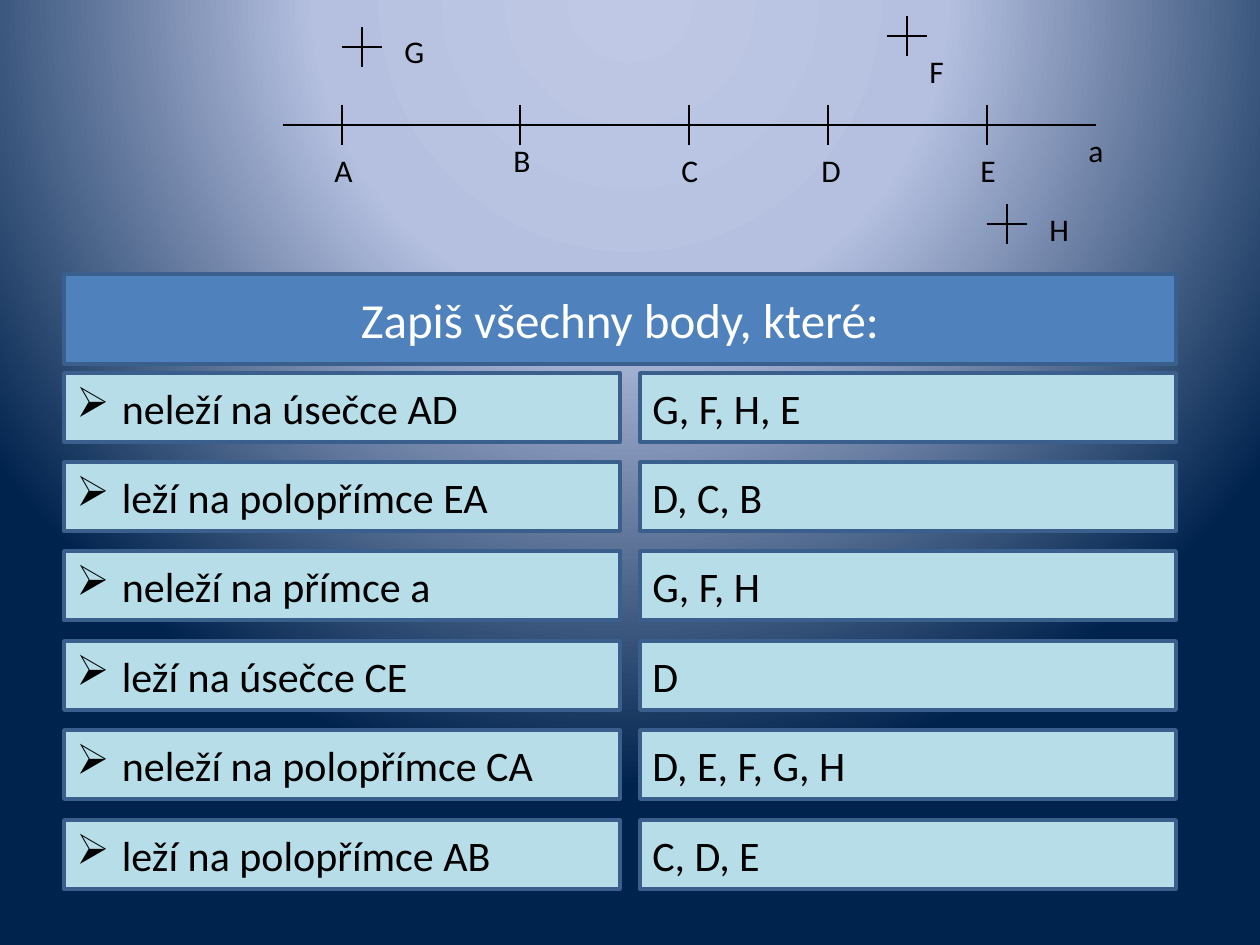
from typing import NamedTuple

from lxml import etree
from pptx import Presentation
from pptx.dml.color import RGBColor
from pptx.enum.shapes import MSO_CONNECTOR, MSO_SHAPE
from pptx.enum.text import MSO_ANCHOR, MSO_AUTO_SIZE, PP_ALIGN
from pptx.oxml.ns import qn
from pptx.slide import Slide
from pptx.text.text import TextFrame
from pptx.util import Pt

STRAIGHT = MSO_CONNECTOR.STRAIGHT
RECTANGLE = MSO_SHAPE.RECTANGLE
MIDDLE = MSO_ANCHOR.MIDDLE
LEFT, CENTER = PP_ALIGN.LEFT, PP_ALIGN.CENTER
GROW = MSO_AUTO_SIZE.SHAPE_TO_FIT_TEXT

BLACK = RGBColor(0x00, 0x00, 0x00)
WHITE = RGBColor(0xFF, 0xFF, 0xFF)
BLUE = RGBColor(0x4F, 0x81, 0xBD)
BORDER = RGBColor(0x3A, 0x5F, 0x8C)
PALE_BLUE = RGBColor(0xB7, 0xDE, 0xE8)
GLOW_STOPS = [
    (0, RGBColor(0xBF, 0xC9, 0xE5)),
    (40, RGBColor(0xB5, 0xC0, 0xE0)),
    (100, RGBColor(0x00, 0x23, 0x4D)),
]
GLOW_CENTER = {"l": 50, "t": -80, "r": 50, "b": 180}

EMU_PER_INCH = 914400
PX_PER_INCH = 126
AXIS_Y = 125
HALF_TICK = 20
BULLET_INDENT = 36
FIRST_ROW_TOP, LAST_ROW_TOP = 373, 820


class Label(NamedTuple):
    text: str
    left: int
    top: int


class Cross(NamedTuple):
    x: int
    y: int


class Box(NamedTuple):
    left: int
    top: int
    width: int
    height: int


class Style(NamedTuple):
    fill: RGBColor
    font_color: RGBColor
    size: int
    alignment: PP_ALIGN


class Task(NamedTuple):
    question: str
    answer: str


HEADING = Style(BLUE, WHITE, 28, CENTER)
ROW = Style(PALE_BLUE, BLACK, 24, LEFT)

TICKS = [342, 520, 689, 828, 987]
CROSSES = [Cross(362, 47), Cross(907, 36), Cross(1007, 224)]
LABELS = [
    Label("a", 1076, 125),
    Label("A", 322, 145),
    Label("B", 501, 135),
    Label("C", 669, 145),
    Label("D", 809, 145),
    Label("E", 968, 145),
    Label("G", 392, 26),
    Label("F", 917, 46),
    Label("H", 1037, 204),
]
TASKS = [
    Task("neleží na úsečce AD", "G, F, H, E"),
    Task("leží na polopřímce EA", "D, C, B"),
    Task("neleží na přímce a", "G, F, H"),
    Task("leží na úsečce CE", "D"),
    Task("neleží na polopřímce CA", "D, E, F, G, H"),
    Task("leží na polopřímce AB", "C, D, E"),
]


def px(length: int) -> int:
    return round(length * EMU_PER_INCH / PX_PER_INCH)


def set_background(slide: Slide) -> None:
    """Fill the background with a circular glow centred above the slide."""
    slide.background.fill.gradient()
    gradient = next(slide.element.iter(qn("a:gradFill")))
    for child in list(gradient):
        gradient.remove(child)
    stops = etree.SubElement(gradient, qn("a:gsLst"))
    for position, color in GLOW_STOPS:
        stop = etree.SubElement(stops, qn("a:gs"), pos=str(position * 1000))
        etree.SubElement(stop, qn("a:srgbClr"), val=str(color))
    circle = etree.SubElement(gradient, qn("a:path"), {"path": "circle"})
    center = {side: str(percent * 1000) for side, percent in GLOW_CENTER.items()}
    etree.SubElement(circle, qn("a:fillToRect"), center)


def add_line(slide: Slide, x1: int, y1: int, x2: int, y2: int, width: float = 0.75) -> None:
    line = slide.shapes.add_connector(STRAIGHT, px(x1), px(y1), px(x2), px(y2))
    line.line.color.rgb = BLACK
    line.line.width = Pt(width)
    etree.SubElement(line.element.spPr, qn("a:effectLst"))


def add_tick(slide: Slide, x: int, y: int) -> None:
    add_line(slide, x, y - HALF_TICK, x, y + HALF_TICK)


def add_cross(slide: Slide, cross: Cross) -> None:
    add_tick(slide, cross.x, cross.y)
    add_line(slide, cross.x - HALF_TICK, cross.y, cross.x + HALF_TICK, cross.y)


def write_text(frame: TextFrame, text: str, size: int, color: RGBColor) -> None:
    frame.word_wrap = True
    run = frame.paragraphs[0].add_run()
    run.text = text
    run.font.color.rgb = color
    for name, value in {"name": "Calibri", "size": Pt(size)}.items():
        setattr(run.font, name, value)


def add_label(slide: Slide, label: Label) -> None:
    shape = slide.shapes.add_textbox(px(label.left), px(label.top), px(30), px(50))
    write_text(shape.text_frame, label.text, 18, BLACK)
    shape.text_frame.auto_size = GROW


def add_box(slide: Slide, box: Box, text: str, style: Style, bullet: str = "") -> None:
    shape = slide.shapes.add_shape(RECTANGLE, *map(px, box))
    shape.shadow.inherit = False
    shape.fill.solid()
    shape.fill.fore_color.rgb = style.fill
    shape.line.color.rgb = BORDER
    shape.line.width = Pt(2)
    frame = shape.text_frame
    frame.vertical_anchor = MIDDLE
    paragraph = frame.paragraphs[0]
    paragraph.alignment = style.alignment
    write_text(frame, f" {text}" if bullet else text, style.size, style.font_color)
    if bullet:
        properties = paragraph._p.get_or_add_pPr()
        properties.set("marL", str(px(BULLET_INDENT)))
        properties.set("indent", str(-px(BULLET_INDENT)))
        etree.SubElement(properties, qn("a:buChar"), char=bullet)


def main() -> None:
    presentation = Presentation()
    presentation.slide_width = px(1260)
    presentation.slide_height = px(945)
    slide = presentation.slides.add_slide(presentation.slide_layouts[6])
    set_background(slide)

    add_line(slide, 283, AXIS_Y, 1096, AXIS_Y, 1.5)
    for x in TICKS:
        add_tick(slide, x, AXIS_Y)
    for cross in CROSSES:
        add_cross(slide, cross)
    for label in LABELS:
        add_label(slide, label)

    add_box(slide, Box(64, 274, 1112, 90), "Zapiš všechny body, které:", HEADING)
    for row, task in enumerate(TASKS):
        top = FIRST_ROW_TOP + row * (LAST_ROW_TOP - FIRST_ROW_TOP) // (len(TASKS) - 1)
        add_box(slide, Box(64, top, 556, 69), task.question, ROW, "➢")
        add_box(slide, Box(640, top, 536, 69), task.answer, ROW)

    presentation.save("out.pptx")


if __name__ == "__main__":
    main()
